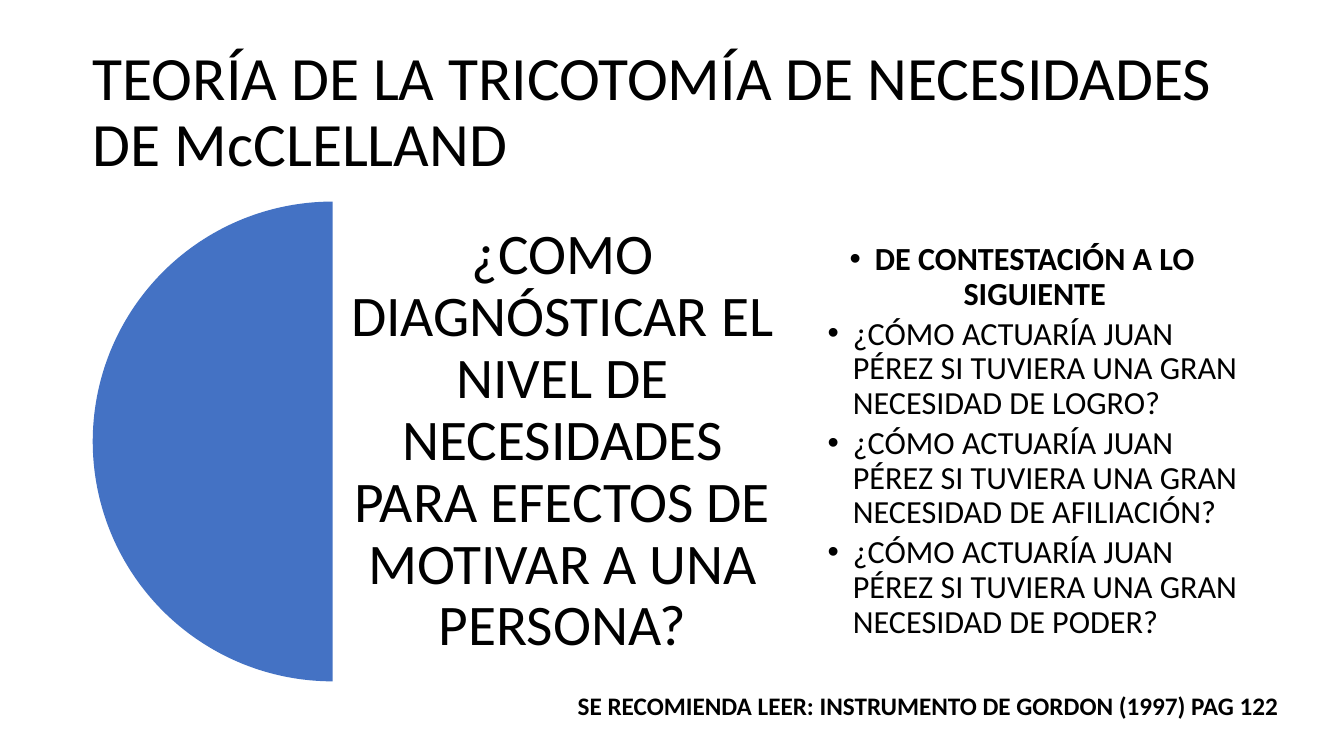
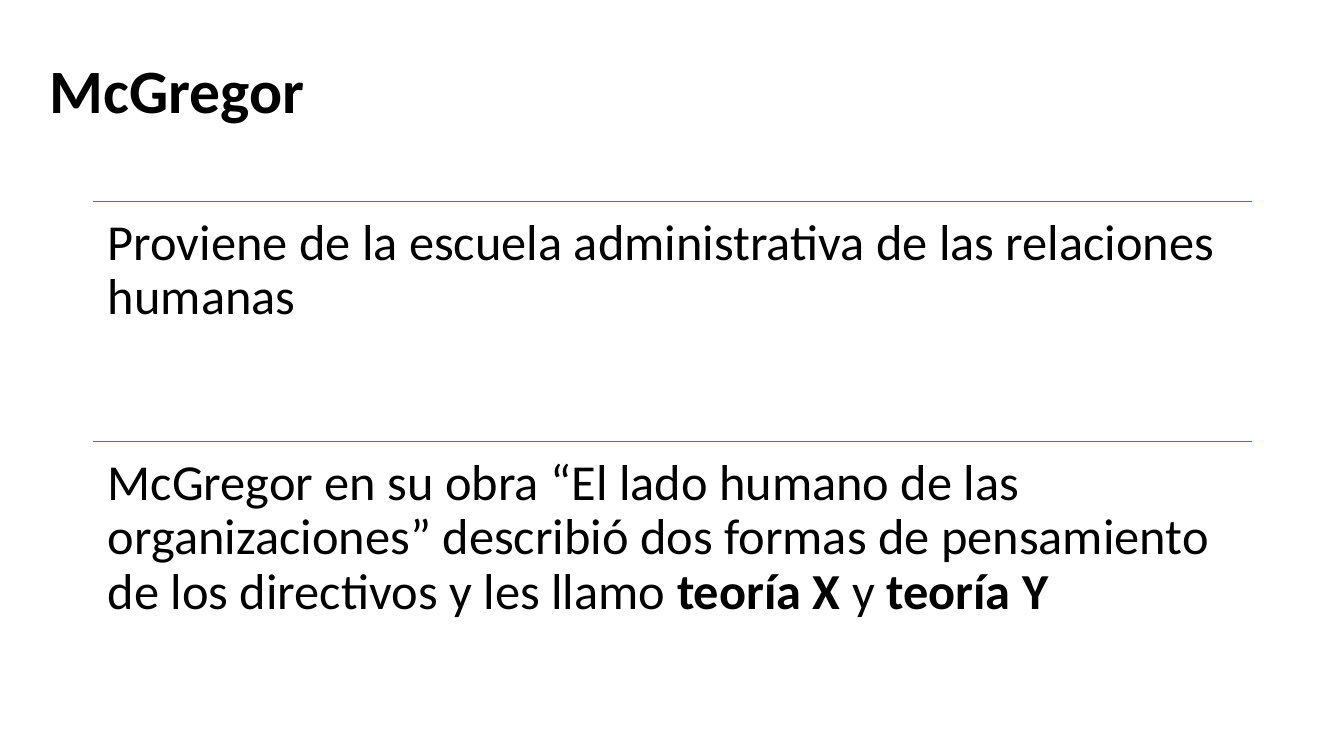
from pptx import Presentation
from pptx.dml.color import RGBColor as Rgb
from pptx.enum.shapes import MSO_CONNECTOR as Conn, MSO_SHAPE as Shape
from pptx.enum.text import MSO_ANCHOR as Anchor, MSO_AUTO_SIZE as Auto, PP_ALIGN as Align
from pptx.oxml.ns import qn
from pptx.util import Inches as In, Pt
from lxml.etree import SubElement as Sub

INK = {"text": "000000", "blue": "4472C4"}
FONT = "Calibri"
WIDE, HIGH = 13.33, 7.5
BODY = (0.92, 2, 11.5, 4.76)


def tint(name):
    """Return the named colour."""
    return Rgb.from_string(INK[name])


def frame(shape, box, inset, anchor):
    """Place a text shape and set its margins."""
    shape.left, shape.top, shape.width, shape.height = map(In, box)
    body = shape.text_frame
    body.auto_size = Auto.NONE
    body.word_wrap = True
    body.vertical_anchor = anchor
    body.margin_left = body.margin_right = In(inset)
    body.margin_top = body.margin_bottom = In(inset)
    return body


def write(body, text, size, bold=False, align=Align.LEFT, space=0.9, after=0, indent=None):
    """Add a paragraph of plain text or of (text, bold) runs."""
    first = body.paragraphs[0]
    para = body.add_paragraph() if first.runs else first
    para.alignment, para.line_spacing = align, space
    para.space_before, para.space_after = Pt(0), Pt(after)
    if indent:
        props = para._p.get_or_add_pPr()
        props.set("marL", str(In(indent)))
        props.set("indent", str(-In(0.25)))
        Sub(props, qn("a:buFont")).set("typeface", "Arial")
        Sub(props, qn("a:buChar")).set("char", "•")
    for words, heavy in [(text, bold)] if isinstance(text, str) else text:
        run = para.add_run()
        run.text = words
        font = run.font
        font.name, font.size, font.bold = FONT, Pt(size), heavy
        font.color.rgb = tint("text")


def box_text(slide, box, inset=0.1, anchor=Anchor.TOP):
    """Add a text box and return its text frame."""
    return frame(slide.shapes.add_textbox(*map(In, box)), box, inset, anchor)


def start(deck, title, box, bold=False):
    """Add a slide with its title."""
    slide = deck.slides.add_slide(deck.slide_layouts[5])
    write(frame(slide.shapes.title, box, 0, Anchor.MIDDLE), title, 44, bold)
    return slide


def half_pie(slide, box):
    """Draw a left half disc with its centre on the right side of the box."""
    left, top, _, high = box
    pie = slide.shapes.add_shape(Shape.PIE, *map(In, (left, top, high, high)))
    pie.adjustments[0], pie.adjustments[1] = 54, 162
    pie.shadow.inherit = False
    pie.fill.solid()
    pie.fill.fore_color.rgb = tint("blue")
    pie.line.fill.background()


def ask(slide, box, question, lead, items):
    """Set the half disc, the question and the list side by side."""
    left, top, wide, high = box
    half_pie(slide, box)
    mid = left + high / 2
    col = (wide - high / 2) / 2
    body = box_text(slide, (mid, top, col, high), 0.17, Anchor.MIDDLE)
    write(body, question, 41, align=Align.CENTER, after=14)
    body = box_text(slide, (mid + col, top, col, high), 0.1, Anchor.MIDDLE)
    write(body, lead, 23, True, Align.CENTER, after=3.5, indent=0.25)
    for item in items:
        write(body, item, 23, after=3.5, indent=0.5)


def ruled(slide, box, texts):
    """Stack texts in equal rows, each under a rule."""
    left, top, wide, high = box
    row = high / len(texts)
    for i, text in enumerate(texts):
        y = top + i * row
        rule = slide.shapes.add_connector(Conn.STRAIGHT, In(left), In(y), In(left + wide), In(y))
        rule.line.color.rgb = tint("blue")
        rule.line.width = Pt(1)
        Sub(rule._element.spPr, qn("a:effectLst"))
        write(box_text(slide, (left, y, wide, row), 0.15), text, 36, after=12.6)


def main():
    """Build and save the slides."""
    deck = Presentation()
    deck.slide_width, deck.slide_height = In(WIDE), In(HIGH)

    slide = start(deck, "TEORÍA DE LA TRICOTOMÍA DE NECESIDADES DE McCLELLAND", (0.92, 0.4, 11.5, 1.45))
    needs = ("LOGRO", "AFILIACIÓN", "PODER")
    ask(slide, BODY,
        "¿COMO DIAGNÓSTICAR EL NIVEL DE NECESIDADES PARA EFECTOS DE MOTIVAR A UNA PERSONA?",
        "DE CONTESTACIÓN A LO SIGUIENTE",
        [f"¿CÓMO ACTUARÍA JUAN PÉREZ SI TUVIERA UNA GRAN NECESIDAD DE {need}?" for need in needs])
    note = box_text(slide, (4.48, 6.8, 8.3, 0.4), 0.1)
    note.margin_top = note.margin_bottom = In(0.05)
    write(note, "SE RECOMIENDA LEER: INSTRUMENTO DE GORDON (1997) PAG 122", 18, True, Align.RIGHT, 1)

    slide = start(deck, "McGregor", (0.49, 0, 11.92, 1.85), True)
    ruled(slide, BODY, [
        "Proviene de la escuela administrativa de las relaciones humanas",
        [("McGregor en su obra “El lado humano de las organizaciones” describió dos formas "
          "de pensamiento de los directivos y les llamo ", False),
         ("teoría X", True), (" y ", False), ("teoría Y", True)]])

    deck.save("out.pptx")


if __name__ == "__main__":
    main()
